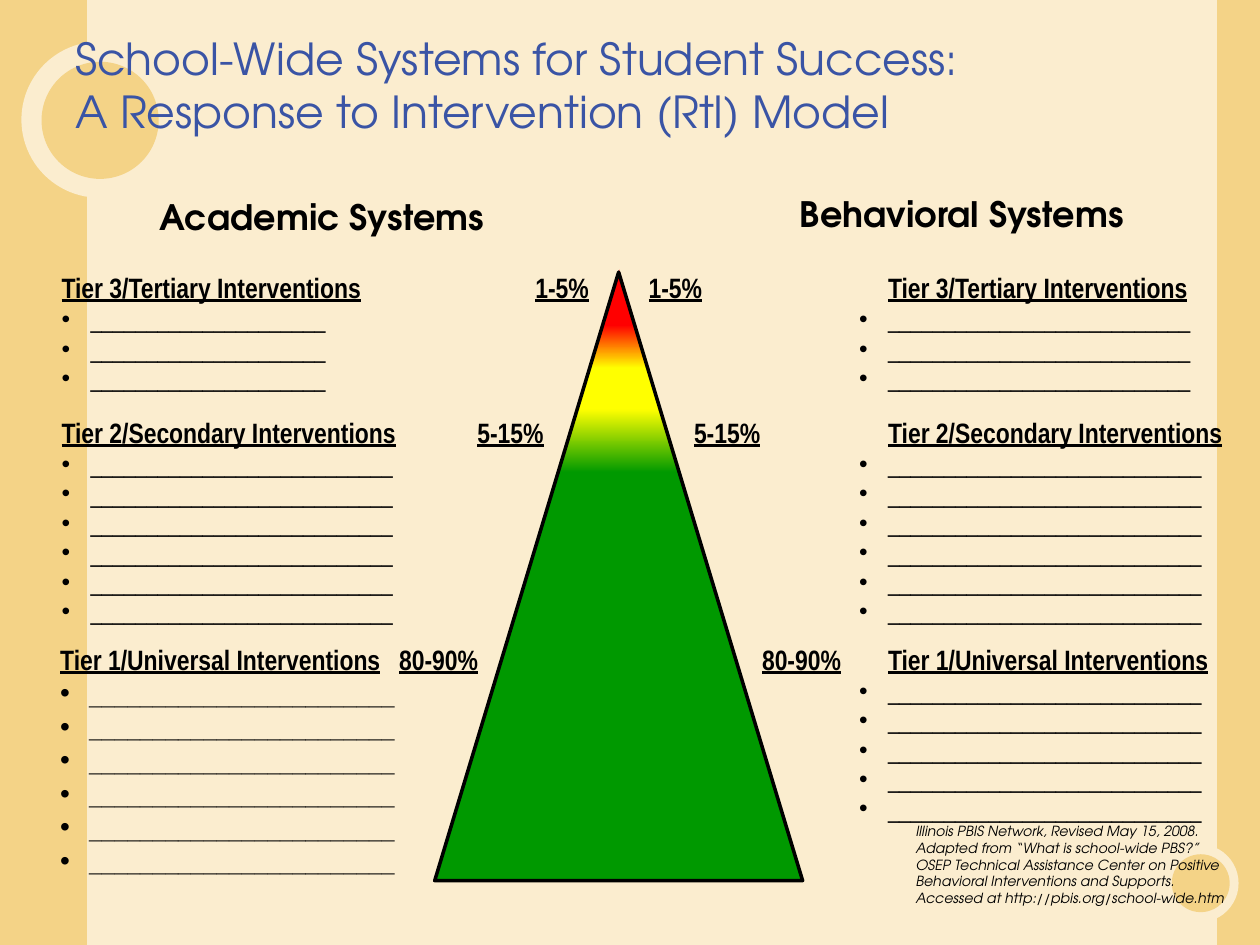
from lxml.etree import SubElement
from pptx import Presentation
from pptx.dml.color import RGBColor
from pptx.enum.shapes import MSO_SHAPE
from pptx.enum.text import MSO_ANCHOR
from pptx.oxml.ns import qn
from pptx.util import Inches, Pt

CREAM = RGBColor(0xFB, 0xED, 0xCF)
GOLD = RGBColor(0xF4, 0xD3, 0x87)
BLUE = RGBColor(0x3A, 0x54, 0xA5)
BLACK = RGBColor(0, 0, 0)
RED = RGBColor(0xFF, 0, 0)
YELLOW = RGBColor(0xFF, 0xFF, 0)
GREEN = RGBColor(0, 0x99, 0)

NARROW = "Arial Narrow"
ADVENTOR = "TeX Gyre Adventor"

# Pyramid geometry, inches
CENTER, APEX, BASE, HALF_WIDTH = 4.91, 2.16, 6.99, 1.46
HANG = 0.23
RIGHT_INDENT = 2

# name, share, top, then per side: width, tab of the share, blanks, blank length, blank size
TIERS = [
    ("Tier 3/Tertiary Interventions", "1-5%", 2.1,
     (0.39, 4.75, 3.76, 3, 21, 14), (4.95, 4.76, 0.1, 3, 27, 14)),
    ("Tier 2/Secondary Interventions", "5-15%", 3.25,
     (0.39, 4.08, 3.3, 6, 27, 14), (4.95, 5.01, 0.46, 6, 28, 14)),
    ("Tier 1/Universal Interventions", "80-90%", 5.05,
     (0.38, 3.87, 2.69, 6, 24, 16), (4.95, 4.8, 1, 5, 28, 14)),
]


def add_run(p, text, size=16, font=NARROW, color=BLACK, bold=False, italic=False,
            underline=False):
    r = p.add_run()
    r.text = text
    f = r.font
    f.name, f.size, f.color.rgb = font, Pt(size), color
    f.bold, f.italic, f.underline = bold, italic, underline


def add_box(s, left, top, width, height, wrap=True):
    tf = s.shapes.add_textbox(Inches(left), Inches(top), Inches(width), Inches(height)).text_frame
    tf.word_wrap = wrap
    return tf


def set_tabs(p, *stops):
    tabs = SubElement(p._p.get_or_add_pPr(), qn("a:tabLst"))
    for stop in stops:
        SubElement(tabs, qn("a:tab"), pos=str(Inches(stop)), algn="l")


def set_bullet(p, left):
    """Hang a round bullet in front of text that starts at left inches."""
    pPr = p._p.get_or_add_pPr()
    pPr.set("marL", str(Inches(left)))
    pPr.set("indent", str(-Inches(HANG)))
    SubElement(pPr, qn("a:buFont"), typeface="Arial")
    SubElement(pPr, qn("a:buChar"), char="•")


def style(sp, fill=None, line=None):
    sp.shadow.inherit = False
    if fill is None:
        sp.fill.background()
    else:
        sp.fill.solid()
        sp.fill.fore_color.rgb = fill
    if line is None:
        sp.line.fill.background()
    else:
        sp.line.color.rgb = line
        sp.line.width = Pt(2)


def add_preset(shapes, kind, left, top, width, height, fill=None, line=None):
    sp = shapes.add_shape(kind, Inches(left), Inches(top), Inches(width), Inches(height))
    style(sp, fill, line)


def add_band(shapes, top, bottom, fill, fade_to=None):
    """Slice of the pyramid; fade_to is the colour at its top edge."""
    def half(y):
        return (y - APEX) * HALF_WIDTH / (BASE - APEX)

    corners = [(CENTER - half(bottom), bottom), (CENTER - half(top), top),
               (CENTER + half(top), top), (CENTER + half(bottom), bottom)]
    points = [(Inches(x), Inches(y)) for x, y in corners]
    builder = shapes.build_freeform(*points[0])
    builder.add_line_segments(points[1:], close=True)
    sp = builder.convert_to_shape()
    style(sp, fill)
    if fade_to is not None:
        sp.fill.gradient()
        sp.fill.gradient_angle = 90
        for stop, color in zip(sp.fill.gradient_stops, (fill, fade_to)):
            stop.color.rgb = color


def add_backdrop(s):
    s.background.fill.solid()
    s.background.fill.fore_color.rgb = CREAM
    for left, width in ((9.66, 0.34), (0, 0.69)):
        add_preset(s.shapes, MSO_SHAPE.RECTANGLE, left, 0, width, 7.5, GOLD)
    for left, top, size, fill in ((0.17, 0.33, 1.24, CREAM), (0.33, 0.49, 0.93, GOLD),
                                  (9.21, 6.7, 0.62, CREAM), (9.3, 6.78, 0.46, GOLD)):
        add_preset(s.shapes, MSO_SHAPE.OVAL, left, top, size, size, fill)


def add_tier(s, name, share, top, side, on_right):
    left, width, share_tab, count, length, size = side
    tf = add_box(s, left, top, width, 0.35 + count * size / 60)
    p = tf.paragraphs[0]
    if on_right:
        set_tabs(p, share_tab, RIGHT_INDENT)
        parts = ("\t", share, "\t", name)
    else:
        set_tabs(p, share_tab)
        parts = (name, "\t", share)
    for part in parts:
        add_run(p, part, bold=True, underline=part != "\t")
    for _ in range(count):
        p = tf.add_paragraph()
        set_bullet(p, RIGHT_INDENT if on_right else HANG)
        add_run(p, "_" * length, size=size, bold=size == 16)


def add_pyramid(s):
    shapes = s.shapes.add_group_shape().shapes
    add_preset(shapes, MSO_SHAPE.ISOSCELES_TRIANGLE, 4.78, 2.14, 0.27, 0.45, RED)
    add_band(shapes, 3.67, BASE, GREEN)
    add_band(shapes, 3.25, 3.75, GREEN, fade_to=YELLOW)
    add_band(shapes, 2.92, 3.25, YELLOW)
    add_band(shapes, 2.58, 2.92, YELLOW, fade_to=RED)
    add_preset(shapes, MSO_SHAPE.ISOSCELES_TRIANGLE, CENTER - HALF_WIDTH, APEX,
               2 * HALF_WIDTH, BASE - APEX, line=BLACK)


def add_title(s):
    tf = add_box(s, 0.5, 0.17, 9, 1)
    tf.vertical_anchor = MSO_ANCHOR.MIDDLE
    p = tf.paragraphs[0]
    add_run(p, "School-Wide Systems for Student Success:", size=25.2, font=ADVENTOR, color=BLUE)
    p.add_line_break()
    add_run(p, "A Response to Intervention (RtI) Model", size=25.2, font=ADVENTOR, color=BLUE)


def main():
    prs = Presentation()
    prs.slide_width, prs.slide_height = Inches(10), Inches(7.5)
    s = prs.slides.add_slide(prs.slide_layouts[6])
    add_backdrop(s)
    for name, share, top, left_side, right_side in TIERS:
        add_tier(s, name, share, top, left_side, on_right=False)
        add_tier(s, name, share, top, right_side, on_right=True)
    add_title(s)
    for text, left, top in (("Academic Systems", 1.17, 1.5), ("Behavioral Systems", 6.25, 1.48)):
        tf = add_box(s, left, top, 2.78, 0.43, wrap=False)
        add_run(tf.paragraphs[0], text, size=20, font=ADVENTOR, bold=True)
    add_pyramid(s)
    tf = add_box(s, 7.17, 6.48, 2.67, 0.77)
    add_run(tf.paragraphs[0],
            "Illinois PBIS Network, Revised May 15, 2008. Adapted from “What is school-wide PBS?” "
            "OSEP Technical Assistance Center on Positive Behavioral Interventions and Supports. "
            "Accessed at http://pbis.org/school-wide.htm", size=8, font=ADVENTOR, italic=True)
    prs.save("out.pptx")


if __name__ == "__main__":
    main()
